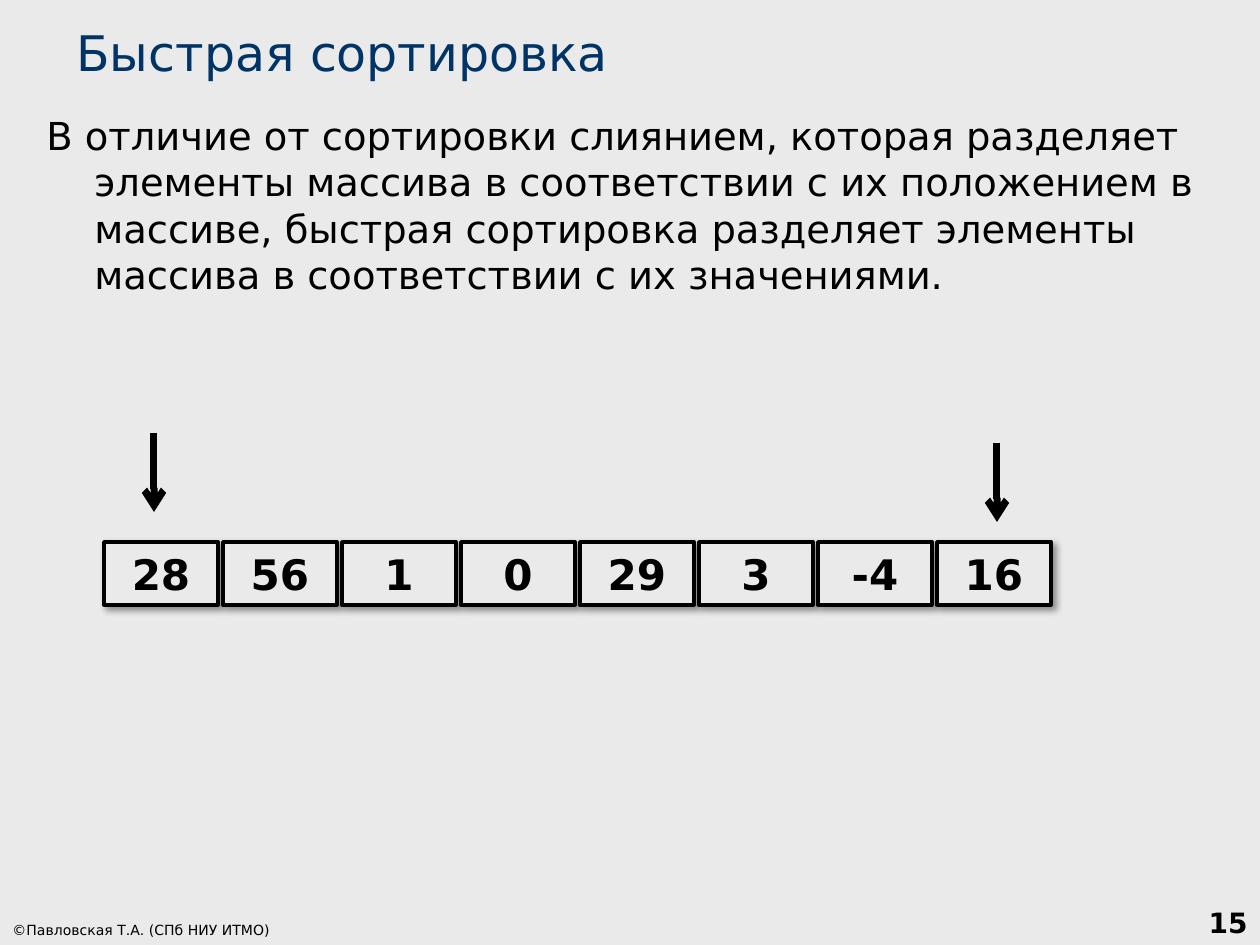
from lxml.etree import SubElement
from pptx import Presentation
from pptx.dml.color import RGBColor
from pptx.enum.shapes import MSO_CONNECTOR, MSO_SHAPE
from pptx.enum.text import MSO_ANCHOR as ANCHOR, PP_ALIGN as ALIGN
from pptx.oxml.ns import qn
from pptx.util import Emu, Pt

COLORS = {"background": "EAEAEA", "title": "003366", "ink": "000000"}
FONT = "DejaVu Sans"


def px(length):
    return Emu(round(length * 914400 / 126))


def write_text(shape, text, color, anchor, align, **font_format):
    frame = shape.text_frame
    frame.word_wrap = True
    frame.vertical_anchor = anchor
    paragraph = frame.paragraphs[0]
    paragraph.text = text
    paragraph.alignment = align
    font = paragraph.runs[0].font
    for name, value in {"name": FONT, **font_format}.items():
        setattr(font, name, value)
    font.color.rgb = RGBColor.from_string(COLORS[color])
    return paragraph


presentation = Presentation()
presentation.slide_width, presentation.slide_height = px(1260), px(945)
slide = presentation.slides.add_slide(presentation.slide_layouts[6])
slide.background.fill.solid()
slide.background.fill.fore_color.rgb = RGBColor.from_string(COLORS["background"])

# Title, body, footer and slide number
BODY = (
    "В отличие от сортировки слиянием, которая разделяет элементы массива "
    "в соответствии с иx положением в массиве, быстрая сортировка разделяет "
    "элементы массива в соответствии с их значениями."
)
texts = [
    ((64, 16, 1181, 72), "Быстрая сортировка", "title", ANCHOR.BOTTOM, ALIGN.LEFT, 28, False),
    ((34, 106, 1191, 228), BODY, "ink", ANCHOR.TOP, ALIGN.LEFT, 22, False),
    ((0, 910, 392, 35), "©Павловская Т.А. (СПб НИУ ИТМО)", "ink", ANCHOR.BOTTOM, ALIGN.LEFT, 8, False),
    ((998, 882, 262, 63), "15", "ink", ANCHOR.BOTTOM, ALIGN.RIGHT, 16, True),
]
for box, text, color, anchor, align, size, bold in texts:
    shape = slide.shapes.add_textbox(*map(px, box))
    paragraph = write_text(shape, text, color, anchor, align, size=Pt(size), bold=bold)
    if text == BODY:
        properties = paragraph._p.get_or_add_pPr()
        properties.set("marL", str(px(48)))
        properties.set("indent", str(px(-48)))

# Array cells with soft shadows
CELL_LEFT, CELL_TOP, CELL_WIDTH, CELL_HEIGHT, CELL_STEP = 104, 542, 114, 63, 119
for index, value in enumerate([28, 56, 1, 0, 29, 3, -4, 16]):
    left = CELL_LEFT + index * CELL_STEP
    cell = slide.shapes.add_shape(
        MSO_SHAPE.RECTANGLE, px(left), px(CELL_TOP), px(CELL_WIDTH), px(CELL_HEIGHT)
    )
    cell.fill.solid()
    cell.fill.fore_color.rgb = RGBColor.from_string(COLORS["background"])
    cell.line.color.rgb = RGBColor.from_string(COLORS["ink"])
    cell.line.width = Pt(2)
    cell.shadow.inherit = False
    effects = cell._element.spPr.find(qn("a:effectLst"))
    shadow = SubElement(
        effects, qn("a:outerShdw"), blurRad=str(Pt(4)), dist=str(Pt(3)),
        dir=str(45 * 60000), algn="tl", rotWithShape="0",
    )
    shadow_color = SubElement(shadow, qn("a:srgbClr"), val=COLORS["ink"])
    SubElement(shadow_color, qn("a:alpha"), val="40000")
    write_text(cell, str(value), "ink", ANCHOR.MIDDLE, ALIGN.CENTER, size=Pt(24), bold=True)

# Arrows over the first and last elements
ARROW_LENGTH = 79
for x, top in [(154, 433), (997, 443)]:
    arrow = slide.shapes.add_connector(
        MSO_CONNECTOR.STRAIGHT, px(x), px(top), px(x), px(top + ARROW_LENGTH)
    )
    arrow.line.color.rgb = RGBColor.from_string(COLORS["ink"])
    arrow.line.width = Pt(4)
    SubElement(arrow.line._get_or_add_ln(), qn("a:tailEnd"), type="arrow")
    SubElement(arrow._element.spPr, qn("a:effectLst"))

presentation.save("out.pptx")
